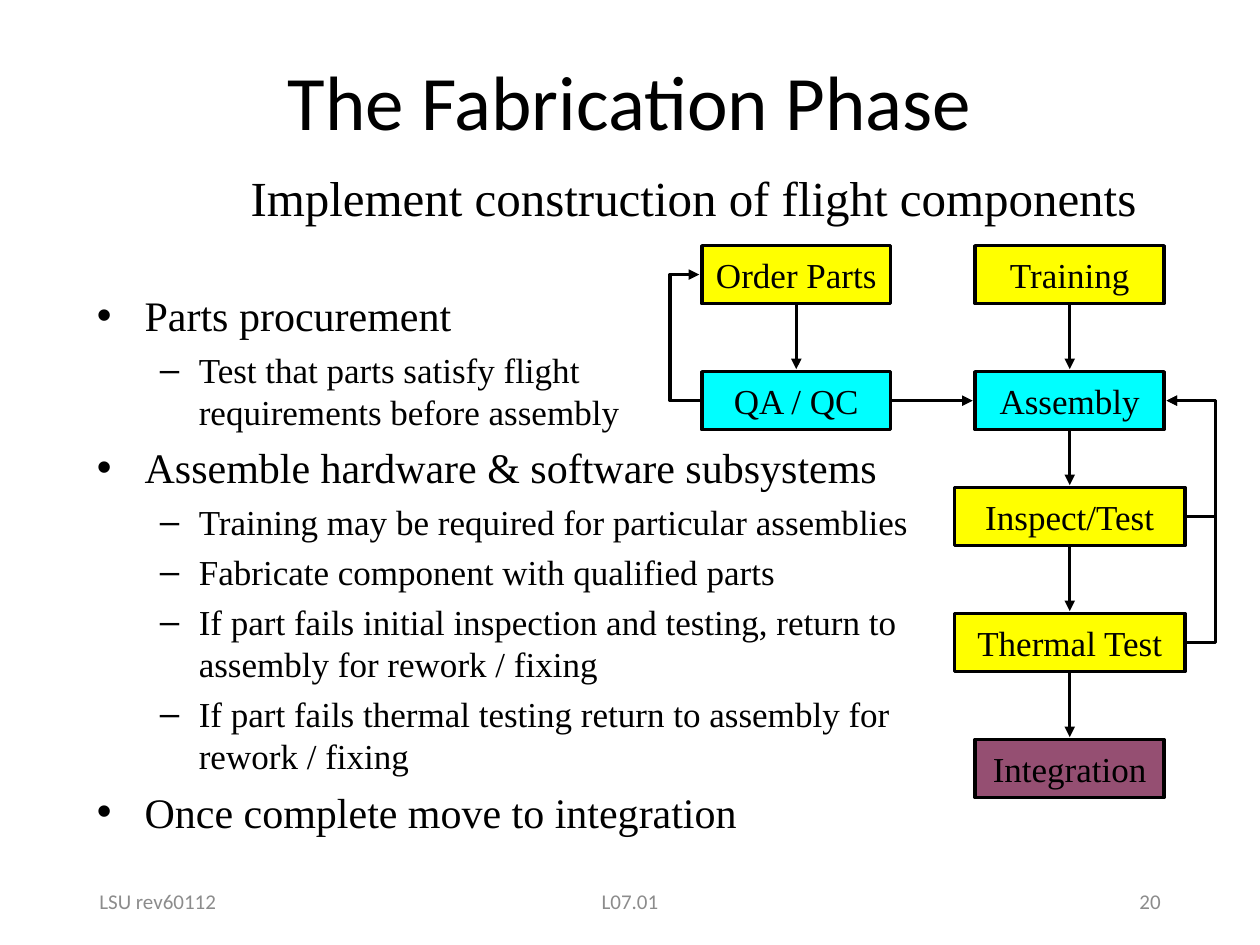
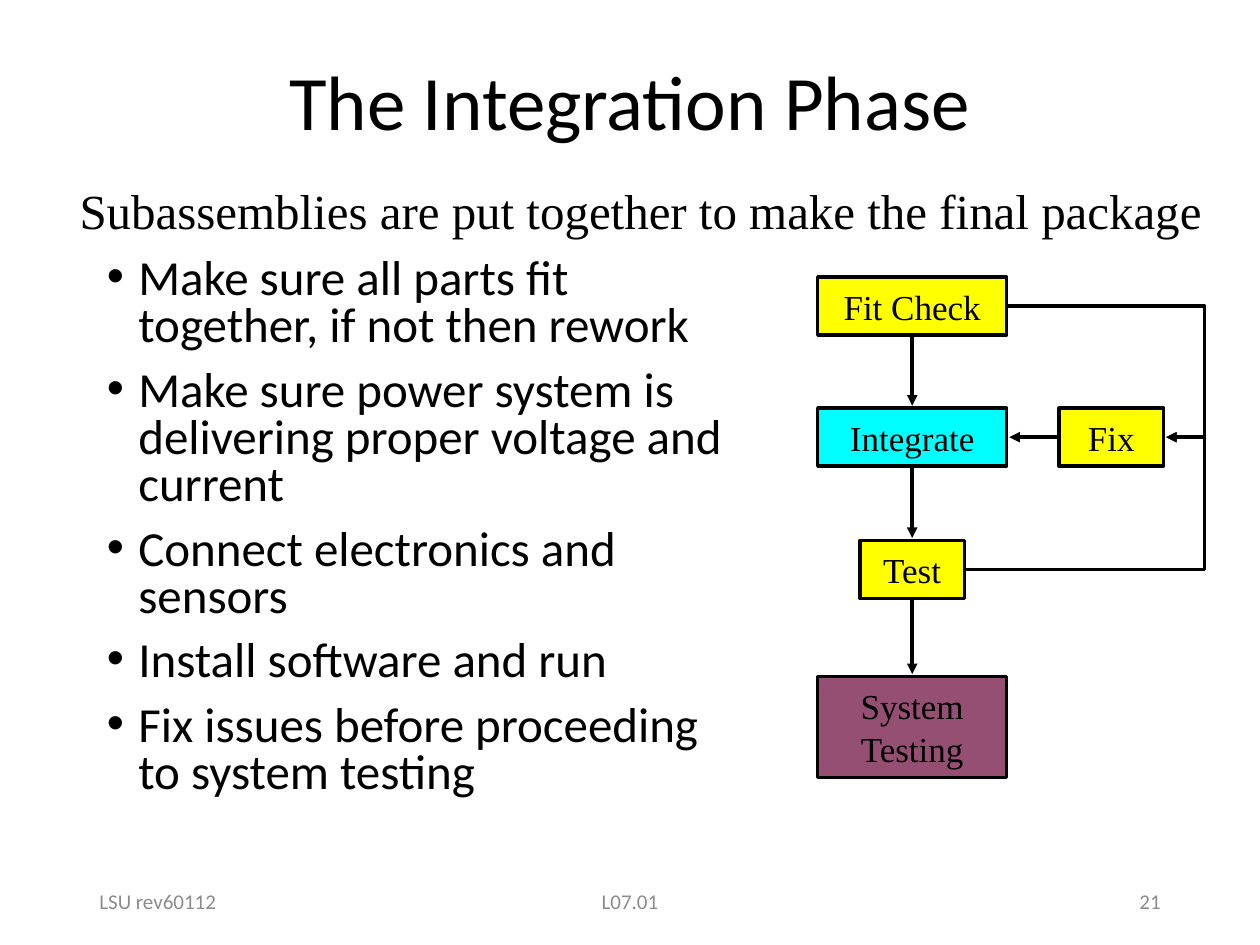
from lxml import etree
from pptx import Presentation
from pptx import util as u
from pptx.dml.color import RGBColor
from pptx.enum import shapes, text
from pptx.oxml.ns import qn

SERIF, SANS = "Times New Roman", "Calibri"
BLACK, GREY = "000000", "8C8C8C"
STEP, MAKE, NEXT = "FFFF00", "00FFFF", "954F72"
LEFT, CENTER, RIGHT = text.PP_ALIGN.LEFT, text.PP_ALIGN.CENTER, text.PP_ALIGN.RIGHT
MIDDLE = text.MSO_ANCHOR.MIDDLE
BOX_H = 0.46
GAP = u.Inches(0.02)


def rgb(value):
    return RGBColor.from_string(value)


def place(sp, left, top, width, height):
    sp.left, sp.top = u.Inches(left), u.Inches(top)
    sp.width, sp.height = u.Inches(width), u.Inches(height)


def style(p, size, face, color=BLACK, align=LEFT):
    p.alignment = align
    for r in p.runs:
        r.font.size, r.font.name = u.Pt(size), face
        r.font.color.rgb = rgb(color)


def add_text(s, at, content, size, face, color=BLACK, align=LEFT, anchor=text.MSO_ANCHOR.TOP):
    tf = s.shapes.add_textbox(*map(u.Inches, at)).text_frame
    tf.word_wrap, tf.vertical_anchor = True, anchor
    tf.text = content
    style(tf.paragraphs[0], size, face, color, align)
    return tf.paragraphs[0]


def add_bullets(s, at, items, levels, face, spacing=None):
    tf = s.shapes.add_textbox(*map(u.Inches, at)).text_frame
    tf.word_wrap = True
    for i, (level, content) in enumerate(items):
        mark, size, margin, hang, before = levels[level]
        p = tf.paragraphs[0] if i == 0 else tf.add_paragraph()
        p.text = content
        p.level = level
        pPr = p._p.get_or_add_pPr()
        pPr.set("marL", str(u.Inches(margin)))
        pPr.set("indent", str(-u.Inches(hang)))
        etree.SubElement(pPr, qn("a:buFont")).set("typeface", "Arial")
        etree.SubElement(pPr, qn("a:buChar")).set("char", mark)
        if spacing:
            p.line_spacing = spacing
        p.space_before = u.Pt(before if i else 0)
        style(p, size, face)


def add_box(s, label, center, top, fill, width=1.5, height=BOX_H):
    at = map(u.Inches, (center - width / 2, top, width, height))
    sp = s.shapes.add_shape(shapes.MSO_SHAPE.RECTANGLE, *at)
    sp.shadow.inherit = False
    sp.fill.solid()
    sp.fill.fore_color.rgb = rgb(fill)
    sp.line.color.rgb = rgb(BLACK)
    sp.line.width = u.Pt(2)
    tf = sp.text_frame
    tf.word_wrap, tf.vertical_anchor = True, MIDDLE
    tf.text = label
    style(tf.paragraphs[0], 20, SERIF, align=CENTER)
    return sp


def middle(sp):
    return sp.top + sp.height // 2


def add_arrow(s, kind, x1, y1, x2, y2):
    c = s.shapes.add_connector(kind, x1, y1, x2, y2)
    c.line.color.rgb = rgb(BLACK)
    c.line.width = u.Pt(2)
    etree.SubElement(c.line._get_or_add_ln(), qn("a:tailEnd")).set("type", "triangle")
    etree.SubElement(c._element.spPr, qn("a:effectLst"))
    return c


def arrow_down(s, upper, lower):
    x = upper.left + upper.width // 2
    add_arrow(s, shapes.MSO_CONNECTOR.STRAIGHT, x, upper.top + upper.height, x, lower.top - GAP)


def arrow_across(s, start, end):
    if start.left < end.left:
        x1, x2 = start.left + start.width, end.left - GAP
    else:
        x1, x2 = start.left, end.left + end.width + GAP
    add_arrow(s, shapes.MSO_CONNECTOR.STRAIGHT, x1, middle(start), x2, middle(end))


def loop_back(s, start, end, via):
    via = u.Inches(via)
    if via < start.left:
        x1, x2 = start.left, end.left - GAP
    else:
        x1, x2 = start.left + start.width, end.left + end.width + GAP
    c = add_arrow(s, shapes.MSO_CONNECTOR.ELBOW, x1, middle(start), x2, middle(end))
    guides = c._element.spPr.find(qn("a:prstGeom")).find(qn("a:avLst"))
    bend = etree.SubElement(guides, qn("a:gd"))
    bend.set("name", "adj1")
    bend.set("fmla", f"val {round((via - x1) / (x2 - x1) * 100000)}")


def new_slide(prs, title, number):
    s = prs.slides.add_slide(prs.slide_layouts[5])
    sp = s.shapes.title
    place(sp, 1.57, 0.21, 6.86, 1.25)
    sp.text_frame.text = title
    sp.text_frame.vertical_anchor = MIDDLE
    p = sp.text_frame.paragraphs[0]
    p.line_spacing = 0.9
    style(p, 44, SANS, align=CENTER)
    for left, width, content, align in (
        (0.69, 2.25, "LSU rev60112", LEFT),
        (3.31, 3.38, "L07.01", CENTER),
        (7.06, 2.25, str(number), RIGHT),
    ):
        add_text(s, (left, 6.95, width, 0.4), content, 12, SANS, GREY, align, MIDDLE)
    return s


def fabrication_slide(prs):
    s = new_slide(prs, "The Fabrication Phase", 20)
    add_bullets(s, (0.67, 2.25, 6.83, 4.25), [
        (0, "Parts procurement"),
        (1, "Test that parts satisfy flight\vrequirements before assembly"),
        (0, "Assemble hardware & software subsystems"),
        (1, "Training may be required for particular assemblies"),
        (1, "Fabricate component with qualified parts"),
        (1, "If part fails initial inspection and testing, return to assembly for rework / fixing"),
        (1, "If part fails thermal testing return to assembly for rework / fixing"),
        (0, "Once complete move to integration"),
    ], [("•", 24, 0.38, 0.38, 5.5), ("–", 20, 0.81, 0.31, 4.6)], SERIF)
    p = add_text(s, (1.67, 1.33, 7.67, 0.58), "Implement construction of flight components",
                 28, SERIF, align=CENTER)
    p.line_spacing = 0.9

    parts_x, build_x = 6.32, 8.49
    order = add_box(s, "Order Parts", parts_x, 1.95, STEP)
    quality = add_box(s, "QA / QC", parts_x, 2.95, MAKE)
    training = add_box(s, "Training", build_x, 1.95, STEP)
    assembly = add_box(s, "Assembly", build_x, 2.95, MAKE)
    inspect = add_box(s, "Inspect/Test", build_x, 3.87, STEP, 1.83)
    thermal = add_box(s, "Thermal Test", build_x, 4.87, STEP, 1.83)
    integration = add_box(s, "Integration", build_x, 5.87, NEXT)
    arrow_down(s, order, quality)
    build = [training, assembly, inspect, thermal, integration]
    for upper, lower in zip(build, build[1:]):
        arrow_down(s, upper, lower)
    arrow_across(s, quality, assembly)
    loop_back(s, quality, order, 5.32)
    for check in (inspect, thermal):
        loop_back(s, check, assembly, 9.65)


def integration_slide(prs):
    s = new_slide(prs, "The Integration Phase", 21)
    add_bullets(s, (0.75, 2, 5.17, 4.67), [
        (0, "Make sure all parts fit together, if not then rework"),
        (0, "Make sure power system is delivering proper voltage and current"),
        (0, "Connect electronics and sensors"),
        (0, "Install software and run"),
        (0, "Fix issues before proceeding to system testing"),
    ], [("•", 28, 0.25, 0.25, 10)], SANS, 0.8)
    add_text(s, (0.5, 1.38, 9.17, 0.54), "Subassemblies are put together to make the final package",
             28, SERIF, align=CENTER)

    flow_x = 7.24
    fit = add_box(s, "Fit Check", flow_x, 2.2, STEP)
    integrate = add_box(s, "Integrate", flow_x, 3.24, MAKE)
    test = add_box(s, "Test", flow_x, 4.29, STEP, 0.83)
    system = add_box(s, "System Testing", flow_x, 5.37, NEXT, height=0.8)
    fix = add_box(s, "Fix", 8.82, 3.24, STEP, 0.83)
    flow = [fit, integrate, test, system]
    for upper, lower in zip(flow, flow[1:]):
        arrow_down(s, upper, lower)
    arrow_across(s, fix, integrate)
    for check in (fit, test):
        loop_back(s, check, fix, 9.56)


def main():
    prs = Presentation()
    prs.slide_width, prs.slide_height = u.Inches(10), u.Inches(7.5)
    fabrication_slide(prs)
    integration_slide(prs)
    prs.save("out.pptx")


if __name__ == "__main__":
    main()
